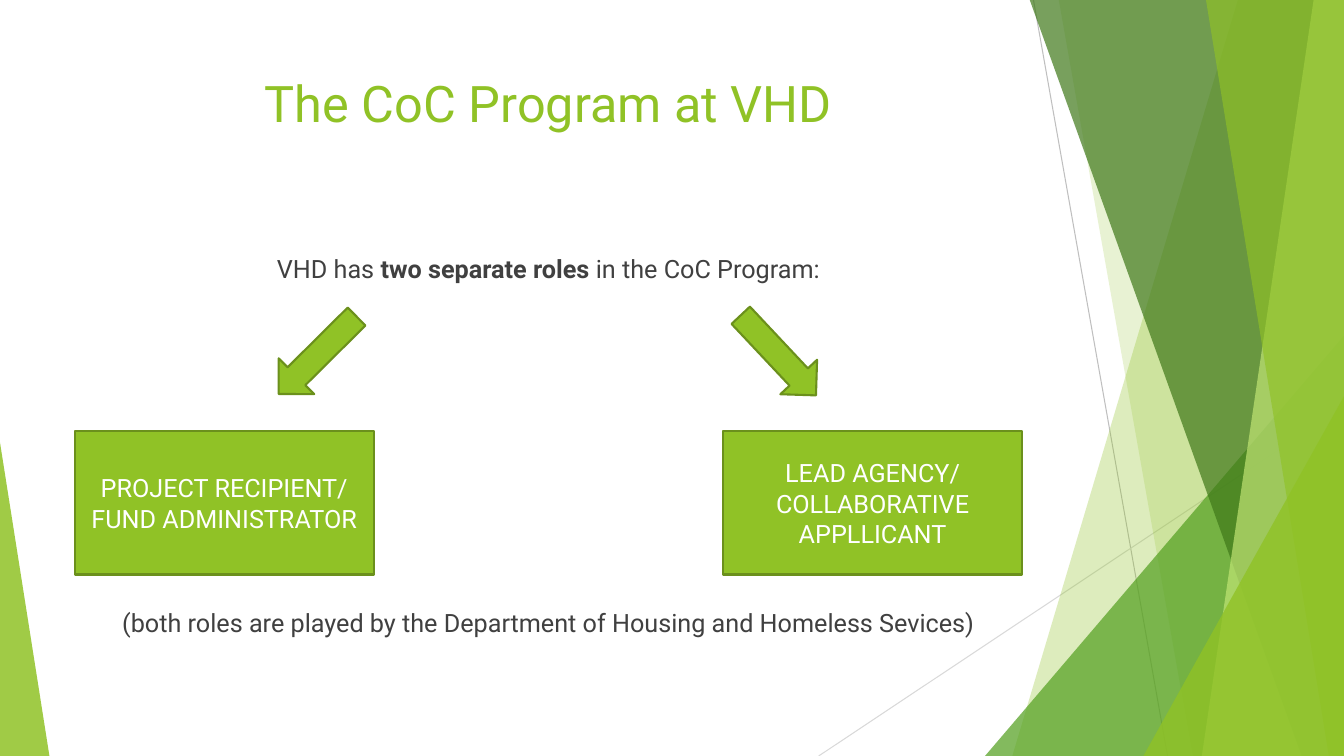
from dataclasses import dataclass

import pptx
import pptx.dml.color
import pptx.enum.shapes
import pptx.enum.text
import pptx.oxml
import pptx.oxml.ns
import pptx.util

Inches = pptx.util.Inches
Pt = pptx.util.Pt
SHAPES = pptx.enum.shapes.MSO_SHAPE
ANCHOR = pptx.enum.text.MSO_ANCHOR

WIDTH, HEIGHT = 13.33, 7.5
FACET_TOP = -0.01
FONT = "Roboto"
GREEN, DARK_GREEN, TEXT_GRAY, WHITE = "90C226", "6B901C", "404040", "FFFFFF"
AGENCY = "VHD"


@dataclass
class Hairline:
    start: tuple[float, float]
    end: tuple[float, float]
    color: str


@dataclass
class Facet:
    """A slanted panel that reaches the right edge of the slide."""
    top_x: float
    bottom_x: float
    color: str
    opacity: int


@dataclass
class Corner:
    """A right triangle standing on the bottom edge of the slide."""
    left: float
    top: float
    width: float
    apex: float
    color: str
    opacity: int


@dataclass
class Role:
    text: str
    box_left: float
    arrow_left: float
    arrow_rotation: float


HAIRLINES = [
    Hairline((10.25, 0), (11.58, HEIGHT), "BFBFBF"),
    Hairline((WIDTH, 4.03), (8.12, HEIGHT), "D9D9D9"),
]
DECORATIONS = [
    Facet(12.28, 10.04, GREEN, 30),
    Facet(10.5, 11.83, GREEN, 20),
    Corner(9.77, 3.33, 3.56, 1, "54A021", 72),
    Facet(10.21, 12.91, "3F7819", 70),
    Facet(13.03, 11.92, "C0E474", 70),
    Facet(11.96, 13.18, GREEN, 65),
    Corner(11.34, 3.93, 1.99, 1, GREEN, 80),
    Corner(0, 4.39, 0.49, 0, GREEN, 85),
]
ROLES = [
    Role("PROJECT RECIPIENT/\nFUND ADMINISTRATOR", 0.74, 2.9, 45.2),
    Role("LEAD AGENCY/\nCOLLABORATIVE APPLLICANT", 7.17, 7.47, 316.8),
]


def rgb(value: str) -> pptx.dml.color.RGBColor:
    return pptx.dml.color.RGBColor.from_string(value)


def fill_shape(shape, color: str, opacity: int = 100, outline: str | None = None) -> None:
    shape.shadow.inherit = False
    shape.fill.solid()
    shape.fill.fore_color.rgb = rgb(color)
    if opacity < 100:
        color_element = shape.fill._xPr.find(".//" + pptx.oxml.ns.qn("a:srgbClr"))
        alpha = pptx.oxml.parse_xml(
            f'<a:alpha {pptx.oxml.ns.nsdecls("a")} val="{opacity * 1000}"/>'
        )
        color_element.append(alpha)
    if outline:
        shape.line.color.rgb = rgb(outline)
        shape.line.width = Pt(1.5)
    else:
        shape.line.fill.background()


def write_text(paragraph, text: str, *, size: float = 18, color: str = TEXT_GRAY,
               bold: bool = False) -> None:
    """Append a centred run to the paragraph; a newline becomes a line break."""
    paragraph.alignment = pptx.enum.text.PP_ALIGN.CENTER
    for index, line in enumerate(text.split("\n")):
        if index:
            paragraph.add_line_break()
        run = paragraph.add_run()
        run.text = line
        run.font.name = FONT
        run.font.size = Pt(size)
        run.font.bold = bold
        run.font.color.rgb = rgb(color)


def add_text_frame(slide, top: float, height: float):
    text_box = slide.shapes.add_textbox(Inches(0.74), Inches(top), Inches(9.4), Inches(height))
    text_box.text_frame.word_wrap = True
    text_box.text_frame.vertical_anchor = ANCHOR.TOP
    return text_box.text_frame


def draw_hairline(slide, hairline: Hairline) -> None:
    points = [Inches(value) for value in (*hairline.start, *hairline.end)]
    connector = slide.shapes.add_connector(
        pptx.enum.shapes.MSO_CONNECTOR.STRAIGHT, *points
    )
    connector.line.color.rgb = rgb(hairline.color)
    connector.line.width = Pt(0.75)
    connector._element.spPr.append(
        pptx.oxml.parse_xml(f'<a:effectLst {pptx.oxml.ns.nsdecls("a")}/>')
    )


def draw_facet(slide, facet: Facet) -> None:
    top, right, bottom = Inches(FACET_TOP), Inches(WIDTH), Inches(HEIGHT)
    builder = slide.shapes.build_freeform(Inches(facet.top_x), top)
    builder.add_line_segments(
        [(right, top), (right, bottom), (Inches(facet.bottom_x), bottom)], close=True
    )
    fill_shape(builder.convert_to_shape(), facet.color, facet.opacity)


def draw_corner(slide, corner: Corner) -> None:
    shape = slide.shapes.add_shape(
        SHAPES.ISOSCELES_TRIANGLE, Inches(corner.left), Inches(corner.top),
        Inches(corner.width), Inches(HEIGHT - corner.top),
    )
    shape.adjustments[0] = corner.apex
    fill_shape(shape, corner.color, corner.opacity)


def draw_role(slide, role: Role) -> None:
    box = slide.shapes.add_shape(
        SHAPES.RECTANGLE, Inches(role.box_left), Inches(4.28), Inches(2.97), Inches(1.42)
    )
    fill_shape(box, GREEN, outline=DARK_GREEN)
    box.text_frame.word_wrap = True
    box.text_frame.vertical_anchor = ANCHOR.MIDDLE
    write_text(box.text_frame.paragraphs[0], role.text, color=WHITE)

    arrow = slide.shapes.add_shape(
        SHAPES.DOWN_ARROW, Inches(role.arrow_left), Inches(2.98), Inches(0.5), Inches(1.09)
    )
    arrow.rotation = role.arrow_rotation
    fill_shape(arrow, GREEN, outline=DARK_GREEN)


def main() -> None:
    presentation = pptx.Presentation()
    presentation.slide_width = Inches(WIDTH)
    presentation.slide_height = Inches(HEIGHT)
    slide = presentation.slides.add_slide(presentation.slide_layouts[6])

    for hairline in HAIRLINES:
        draw_hairline(slide, hairline)
    for decoration in DECORATIONS:
        if isinstance(decoration, Facet):
            draw_facet(slide, decoration)
        else:
            draw_corner(slide, decoration)

    title = add_text_frame(slide, 0.67, 1.44)
    write_text(title.paragraphs[0], f"The CoC Program at {AGENCY}", size=36, color=GREEN)

    body = add_text_frame(slide, 1.58, 5.02)
    body.margin_top = Inches(0.93)
    introduction = body.paragraphs[0]
    write_text(introduction, f"{AGENCY} has ")
    write_text(introduction, "two separate roles ", bold=True)
    write_text(introduction, "in the CoC Program:")
    closing = body.add_paragraph()
    closing.space_before = Pt(231.5)
    write_text(
        closing, "(both roles are played by the Department of Housing and Homeless Sevices)"
    )

    for role in ROLES:
        draw_role(slide, role)

    presentation.save("out.pptx")


if __name__ == "__main__":
    main()
